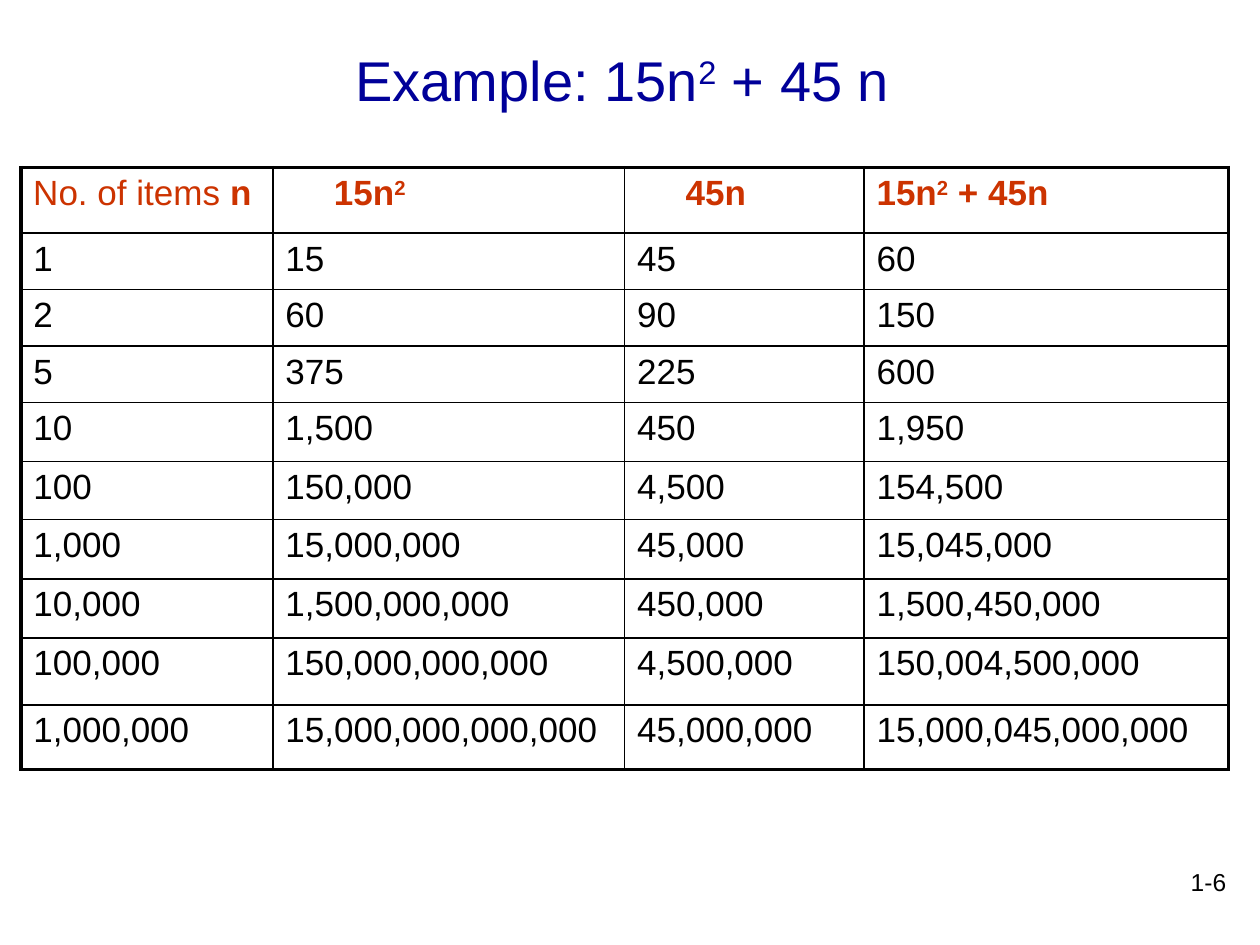
from lxml import etree
from pptx import Presentation
from pptx import util as u
from pptx.dml.color import RGBColor
from pptx.enum import text
from pptx.oxml import ns

FONT = "Arial"
BLACK, RED, BLUE = "000000", "CC3300", "000099"
THICK, THIN = 2.25, 1
COLUMN_WIDTHS = [5.08, 7.09, 4.83, 7.34]
ROW_HEIGHTS = [1.32, 1.14, 1.14, 1.14, 1.19, 1.17, 1.19, 1.19, 1.35, 1.3]
ITEM_COUNTS = [1, 2, 5, 10, 100, 1000, 10_000, 100_000, 1_000_000]
HEADERS = [
    [("No. of items ", {"bold": False}), ("n", {})],
    [("15n", {}), ("2", {"superscript": True})],
    [("45n", {})],
    [("15n", {}), ("2", {"superscript": True}), (" + 45n", {})],
]
HEADER_MARGINS = [0.25, 1.23, 1.23, 0.25]


def color(value):
    return RGBColor.from_string(value)


def add_run(paragraph, content, size=20, fill=BLACK, bold=False, superscript=False):
    run = paragraph.add_run()
    run.text = content
    run.font.name = FONT
    run.font.size = u.Pt(size)
    run.font.bold = bold
    run.font.color.rgb = color(fill)
    if superscript:
        run._r.get_or_add_rPr().set("baseline", "30000")


def add_text_box(slide, left, top, width, height, runs, align, anchor, **style):
    shape = slide.shapes.add_textbox(u.Cm(left), u.Cm(top), u.Cm(width), u.Cm(height))
    frame = shape.text_frame
    frame.word_wrap = True
    frame.vertical_anchor = anchor
    paragraph = frame.paragraphs[0]
    paragraph.alignment = align
    for content, extra in runs:
        add_run(paragraph, content, **{**style, **extra})


def set_borders(cell, widths):
    properties = cell._tc.get_or_add_tcPr()
    for position, (side, width) in enumerate(widths.items()):
        line = etree.Element(ns.qn(f"a:ln{side}"), w=str(u.Pt(width)))
        fill = etree.SubElement(line, ns.qn("a:solidFill"))
        etree.SubElement(fill, ns.qn("a:srgbClr"), val=BLACK)
        properties.insert(position, line)


def add_growth_table(slide):
    row_count, column_count = len(ROW_HEIGHTS), len(COLUMN_WIDTHS)
    table = slide.shapes.add_table(
        row_count, column_count, u.Cm(0.42), u.Cm(3.38),
        u.Cm(sum(COLUMN_WIDTHS)), u.Cm(sum(ROW_HEIGHTS)),
    ).table
    table.horz_banding = False
    for column, width in zip(table.columns, COLUMN_WIDTHS):
        column.width = u.Cm(width)
    for row, height in zip(table.rows, ROW_HEIGHTS):
        row.height = u.Cm(height)

    for column, (runs, margin) in enumerate(zip(HEADERS, HEADER_MARGINS)):
        cell = table.cell(0, column)
        cell.margin_left = u.Cm(margin)
        for content, extra in runs:
            add_run(cell.text_frame.paragraphs[0], content, **{"fill": RED, "bold": True, **extra})

    for row, n in enumerate(ITEM_COUNTS, start=1):
        square, linear = 15 * n**2, 45 * n
        for column, value in enumerate([n, square, linear, square + linear]):
            add_run(table.cell(row, column).text_frame.paragraphs[0], f"{value:,}")

    for row in range(row_count):
        for column in range(column_count):
            cell = table.cell(row, column)
            cell.fill.background()
            set_borders(cell, {
                "L": THICK if column == 0 else THIN,
                "R": THICK if column == column_count - 1 else THIN,
                "T": THICK if row == 0 else THIN,
                "B": THICK if row == row_count - 1 else THIN,
            })


def main():
    presentation = Presentation()
    presentation.slide_width, presentation.slide_height = u.Cm(25.4), u.Cm(19.05)
    slide = presentation.slides.add_slide(presentation.slide_layouts[6])
    add_text_box(slide, 19.69, 17.35, 5.28, 1.27, [("1-6", {})],
                 text.PP_ALIGN.RIGHT, text.MSO_ANCHOR.TOP, size=14)
    add_growth_table(slide)
    title = [("Example: 15n", {}), ("2", {"superscript": True}), (" + 45 n ", {})]
    add_text_box(slide, 1.91, 0.43, 21.59, 2.34, title,
                 text.PP_ALIGN.CENTER, text.MSO_ANCHOR.MIDDLE, size=32, fill=BLUE)
    presentation.save("out.pptx")


if __name__ == "__main__":
    main()
